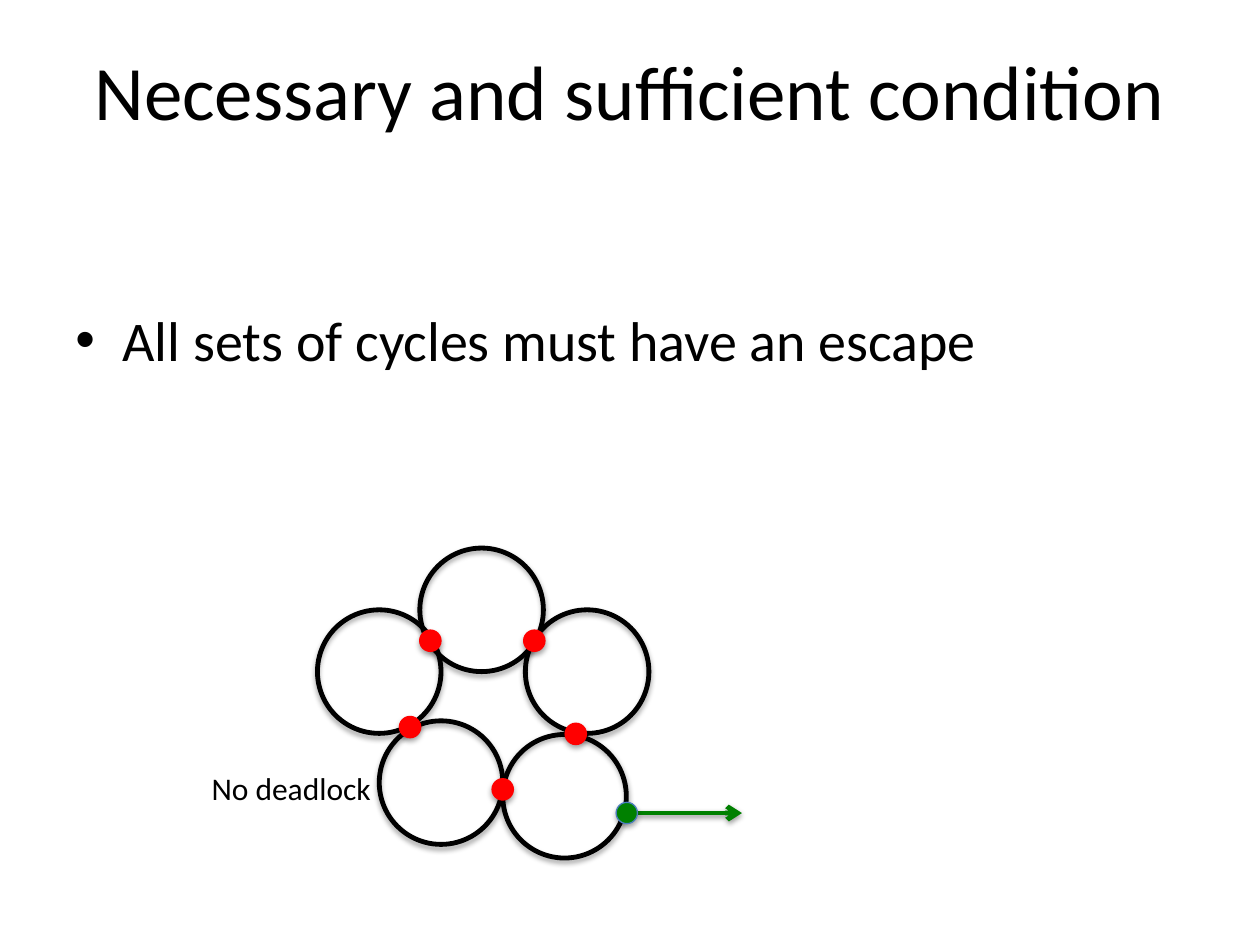
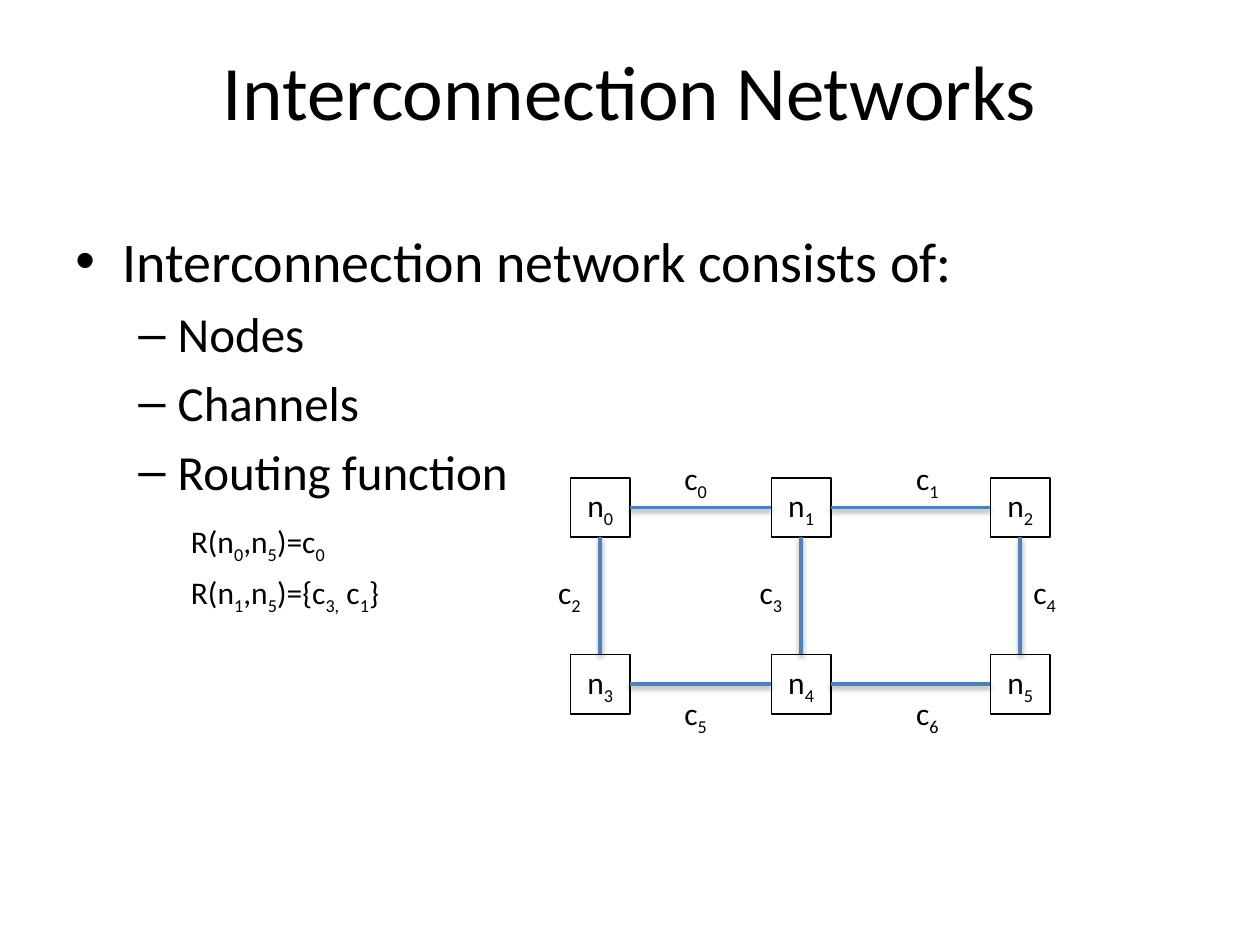
from itertools import product

from lxml.etree import SubElement
from pptx import Presentation
from pptx.dml.color import RGBColor
from pptx.enum.shapes import MSO_CONNECTOR, MSO_SHAPE
from pptx.enum.text import MSO_ANCHOR, MSO_AUTO_SIZE, PP_ALIGN
from pptx.oxml.ns import qn
from pptx.util import Pt

BLACK = RGBColor(0x00, 0x00, 0x00)
RED = RGBColor(0xFF, 0x00, 0x00)
GREEN = RGBColor(0x00, 0x80, 0x00)
BLUE = RGBColor(0x4F, 0x81, 0xBD)
STEEL = RGBColor(0x4B, 0x7E, 0xBC)
FONT = "Calibri"
TOP, LEFT, BOTTOM, RIGHT = range(4)


def write(para, text, size=18, color=BLACK, align=None):
    """Write text into a paragraph; parts between underscores are subscripts."""
    para.alignment = align
    for index, part in enumerate(text.split("_")):
        if not part:
            continue
        span = para.add_run()
        span.text = part
        span.font.name = FONT
        span.font.size = Pt(size)
        span.font.color.rgb = color
        if index % 2:
            span._r.get_or_add_rPr().set("baseline", "-25000")


def cast_shadow(element, opacity, distance):
    """Give a drawn element a soft shadow straight below it."""
    properties = element.spPr
    effects = properties.find(qn("a:effectLst"))
    if effects is None:
        effects = SubElement(properties, qn("a:effectLst"))
    shadow = SubElement(effects, qn("a:outerShdw"), blurRad=str(Pt(3.1)),
                        dist=str(Pt(distance)), dir="5400000", rotWithShape="0")
    color = SubElement(shadow, qn("a:srgbClr"), val=str(BLACK))
    SubElement(color, qn("a:alpha"), val=str(opacity * 1000))


class Painter:
    """Holds the deck style and draws on the current slide."""

    BULLETS = {0: ("•", 32, 27), 1: ("–", 28, 58.5)}
    HANGING = {0: 27, 1: 22.5}

    def __init__(self):
        """Start a deck of 10 by 7.5 inch slides."""
        self.deck = Presentation()
        self.deck.slide_width, self.deck.slide_height = Pt(720), Pt(540)
        self.page = None

    def new_page(self, title):
        """Add a slide with its centred title."""
        self.page = self.deck.slides.add_slide(self.deck.slide_layouts[6])
        frame = self.text_frame(36, 21.6, 648, 90)
        write(frame.paragraphs[0], title, size=44, align=PP_ALIGN.CENTER)

    def text_frame(self, left, top, width, height):
        """Add a wrapping text box and return its frame."""
        box = self.page.shapes.add_textbox(Pt(left), Pt(top), Pt(width), Pt(height))
        box.text_frame.word_wrap = True
        return box.text_frame

    def bullets(self, items, top):
        """Add a bulleted list of (level, text) items down to the body's bottom."""
        frame = self.text_frame(36, top, 648, 482.4 - top)
        for index, (level, text) in enumerate(items):
            para = frame.add_paragraph() if index else frame.paragraphs[0]
            mark, size, margin = self.BULLETS[level]
            para.level = level
            para.space_before = Pt(size * 0.2)
            properties = para._p.get_or_add_pPr()
            properties.set("marL", str(Pt(margin)))
            properties.set("indent", str(-Pt(self.HANGING[level])))
            SubElement(properties, qn("a:buFont"), typeface="Arial")
            SubElement(properties, qn("a:buChar"), char=mark)
            write(para, text, size=size)

    def label(self, text, left, top, width=28.4):
        """Add a one-line label that grows with its text."""
        frame = self.text_frame(left, top, width, 29)
        frame.word_wrap = False
        frame.auto_size = MSO_AUTO_SIZE.SHAPE_TO_FIT_TEXT
        write(frame.paragraphs[0], text)

    def shape(self, kind, left, top, side, line, weight, fill=None):
        """Add a square-framed shape without a shadow."""
        shape = self.page.shapes.add_shape(kind, Pt(left), Pt(top), Pt(side), Pt(side))
        shape.shadow.inherit = False
        shape.line.color.rgb = line
        shape.line.width = Pt(weight)
        if fill is None:
            shape.fill.background()
        else:
            shape.fill.solid()
            shape.fill.fore_color.rgb = fill
        return shape

    def circle(self, center, diameter, line, weight, fill=None):
        """Add a shadowed circle around a centre."""
        left, top = (value - diameter / 2 for value in center)
        circle = self.shape(MSO_SHAPE.OVAL, left, top, diameter, line, weight, fill)
        cast_shadow(circle._element, 35, 1.8)

    def node(self, text, left, top):
        """Add a network node and return it."""
        node = self.shape(MSO_SHAPE.RECTANGLE, left, top, 34, BLACK, 1)
        frame = node.text_frame
        frame.margin_left = frame.margin_right = 0
        frame.margin_top = frame.margin_bottom = 0
        frame.vertical_anchor = MSO_ANCHOR.MIDDLE
        write(frame.paragraphs[0], text, align=PP_ALIGN.CENTER)
        return node

    def line(self, color, weight, start=(0, 0), end=(0, 0), arrow=False):
        """Add a shadowed straight line, with an arrowhead if asked."""
        ends = [Pt(value) for value in (*start, *end)]
        line = self.page.shapes.add_connector(MSO_CONNECTOR.STRAIGHT, *ends)
        line.line.color.rgb = color
        line.line.width = Pt(weight)
        if arrow:
            SubElement(line.line._get_or_add_ln(), qn("a:tailEnd"), type="arrow")
        cast_shadow(line._element, 38, 1.6)
        return line

    def channel(self, first, first_side, second, second_side):
        """Join two nodes with a channel."""
        line = self.line(BLUE, 2)
        line.begin_connect(first, first_side)
        line.end_connect(second, second_side)


def draw_condition(painter):
    """Draw the ring of cycles with one escape."""
    painter.new_page("Necessary and sufficient condition")
    painter.bullets([(0, "All sets of cycles must have an escape")], top=171)
    cycles = [(216.7, 383.8), (275.2, 348.5), (335.5, 383.8), (322.6, 455), (252, 447.2)]
    for center in cycles:
        painter.circle(center, 70.6, BLACK, 2.75)
    for first, second in zip(cycles, cycles[1:] + cycles[:1]):
        contact = [(a + b) / 2 for a, b in zip(first, second)]
        painter.circle(contact, 12.2, RED, 0.75, fill=RED)
    painter.line(GREEN, 2.75, (364.3, 464.6), (424, 464.6), arrow=True)
    painter.circle((358.2, 464.6), 12.2, STEEL, 0.75, fill=GREEN)
    painter.label("No deadlock", 113.8, 435.6, width=106.6)


def draw_network(painter):
    """Draw the six-node network and its routing function."""
    painter.new_page("Interconnection Networks")
    painter.bullets([(0, "Interconnection network consists of:"), (1, "Nodes"),
                     (1, "Channels"), (1, "Routing function")], top=126)
    places = product((273, 374), (326, 440.8, 566))
    nodes = [painter.node(f"n_{index}_", left, top)
             for index, (top, left) in enumerate(places)]
    for index in (0, 1, 3, 4):
        painter.channel(nodes[index], RIGHT, nodes[index + 1], LEFT)
    for upper, lower in zip(nodes[:3], nodes[3:]):
        painter.channel(upper, BOTTOM, lower, TOP)
    spots = [*product((384, 516.4), (258.6,)), *product((311.8, 427, 583.4), (324,)),
             *product((384, 516.4), (393.2,))]
    for index, (left, top) in enumerate(spots):
        painter.label(f"c_{index}_", left, top)
    painter.label("R(n_0_,n_5_)=c_0_", 102, 295, width=94.4)
    painter.label("R(n_1_,n_5_)={c_3,_ c_1_}", 102, 324, width=126.8)


def main():
    """Build and save the deck."""
    painter = Painter()
    draw_condition(painter)
    draw_network(painter)
    painter.deck.save("out.pptx")


if __name__ == "__main__":
    main()
